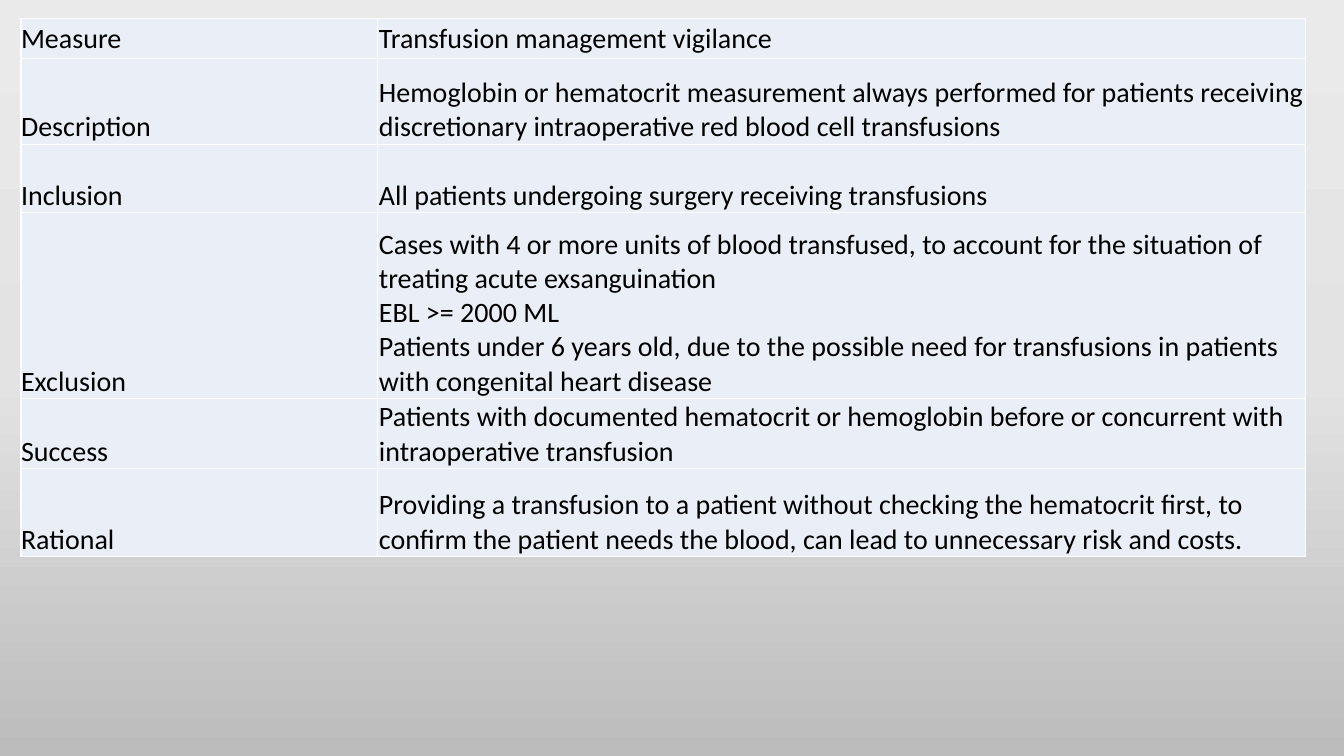
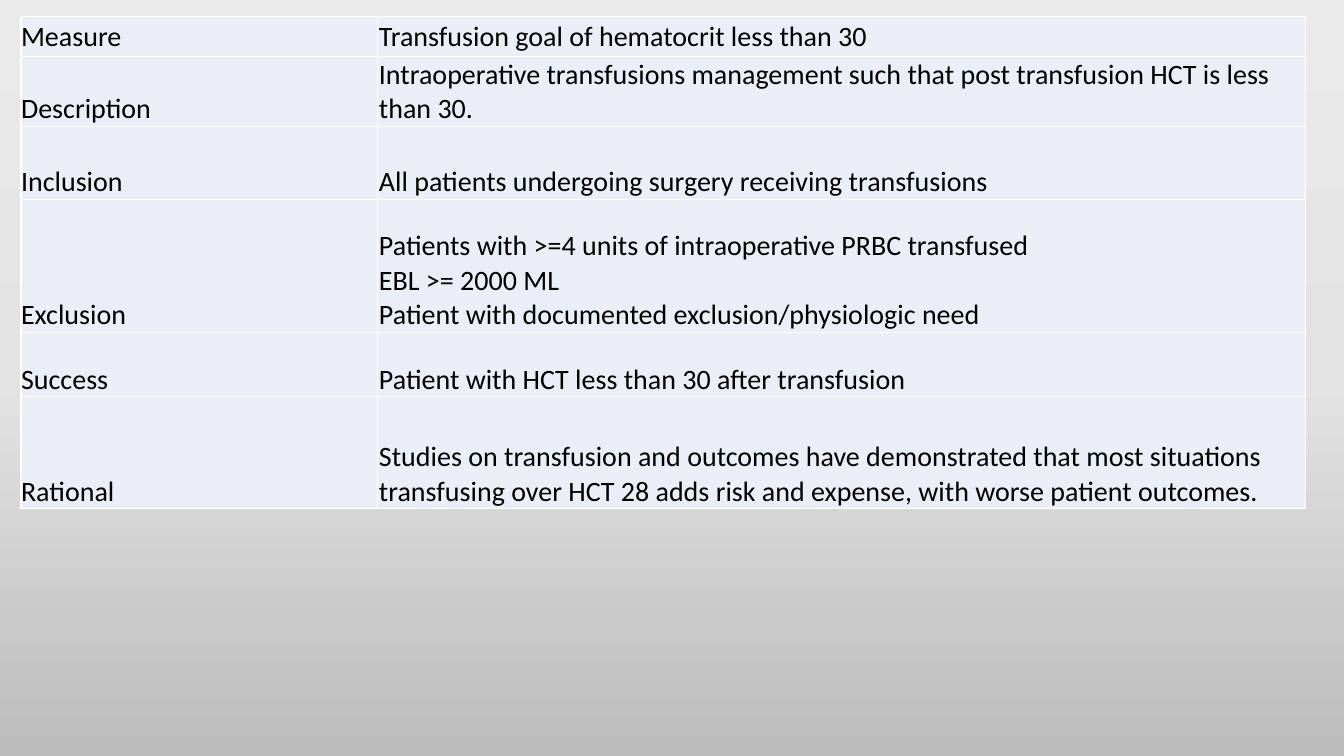
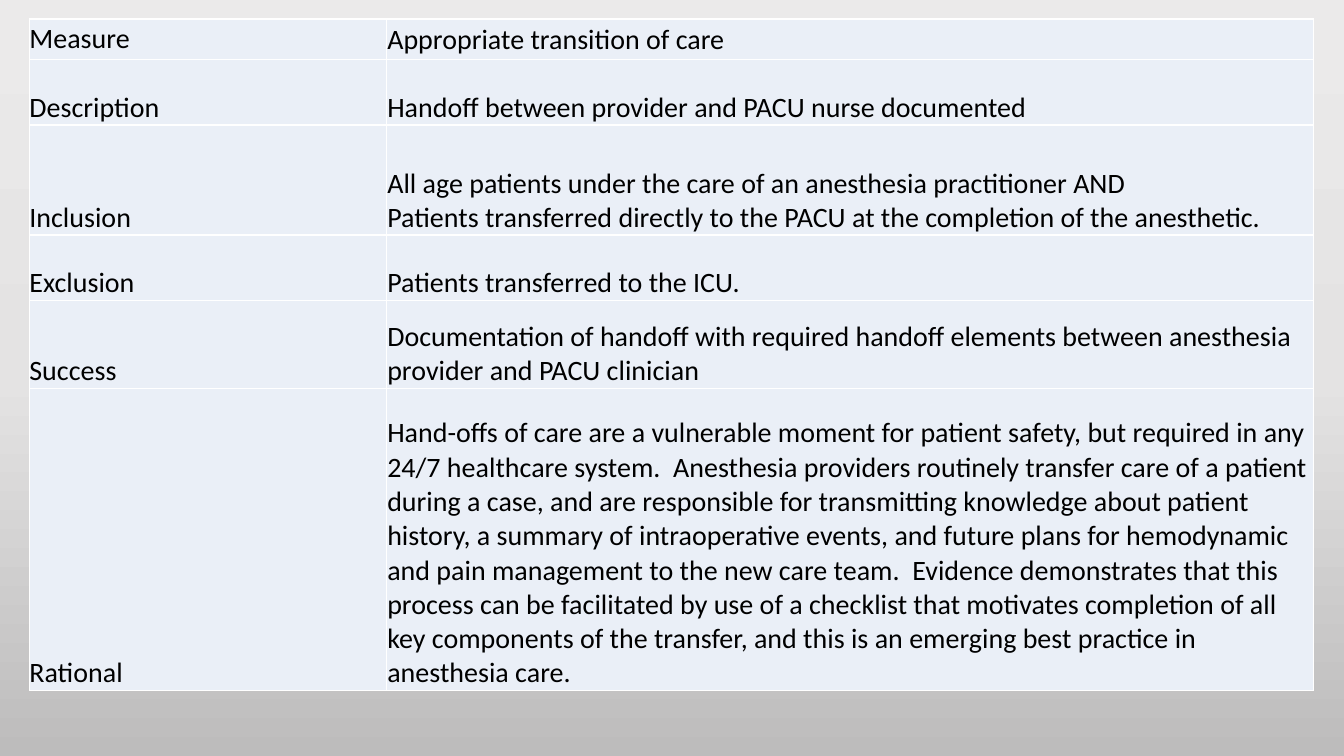
from copy import deepcopy

from lxml import etree
from pptx import Presentation
from pptx import util as u
from pptx.dml.color import RGBColor
from pptx.enum import text
from pptx.oxml import ns

COLORS = {
    "bg_top": "EBEAEA",
    "bg_middle": "E4E3E3",
    "bg_bottom": "BDBCBC",
    "cell": "EAEFF7",
    "border": "FFFFFF",
    "text": "000000",
}
FONT = {"name": "Calibri", "size": u.Pt(20), "bold": False}
BORDER_WIDTH = u.Pt(1)
COL_WIDTHS = (8.99, 23.37)
LABELS = ("Measure", "Description", "Inclusion", "Exclusion", "Success", "Rational")
LABEL_MARGINS = {
    "margin_left": 0, "margin_top": 0, "margin_right": 0, "margin_bottom": 0,
}
VALUE_MARGINS = {
    "margin_left": u.Cm(0.03), "margin_top": u.Cm(0.03),
    "margin_right": u.Cm(0.03), "margin_bottom": 0,
}

MEASURES = [
    {
        "at": (0.53, 0.46),
        "heights": (1.02, 2.16, 1.72, 4.69, 1.63, 2.22),
        "values": (
            "Transfusion management vigilance",
            "Hemoglobin or hematocrit measurement always performed for patients "
            "receiving discretionary intraoperative red blood cell transfusions",
            "All patients undergoing surgery receiving transfusions",
            "Cases with 4 or more units of blood transfused, to account for the "
            "situation of treating acute exsanguination\n"
            "EBL >= 2000 ML\n"
            "Patients under 6 years old, due to the possible need for transfusions "
            "in patients with congenital heart disease",
            "Patients with documented hematocrit or hemoglobin before or concurrent "
            "with intraoperative transfusion",
            "Providing a transfusion to a patient without checking the hematocrit "
            "first, to confirm the patient needs the blood, can lead to unnecessary "
            "risk and costs.",
        ),
    },
    {
        "at": (0.53, 0.41),
        "heights": (1.02, 1.52, 1.83, 3.35, 1.63, 2.82),
        "values": (
            "Transfusion goal of hematocrit less than 30",
            "Intraoperative transfusions management such that post transfusion HCT "
            "is less than 30.",
            "All patients undergoing surgery receiving transfusions",
            "Patients with >=4 units of intraoperative PRBC transfused\n"
            "EBL >= 2000 ML\n"
            "Patient with documented exclusion/physiologic need",
            "Patient with HCT less than 30 after transfusion",
            "Studies on transfusion and outcomes have demonstrated that most "
            "situations transfusing over HCT 28 adds risk and expense, with worse "
            "patient outcomes.",
        ),
    },
    {
        "at": (0.74, 0.48),
        "heights": (1.02, 1.65, 2.77, 1.65, 2.21, 7.62),
        "values": (
            "Appropriate transition of care",
            "Handoff between provider and PACU nurse documented",
            "All age patients under the care of an anesthesia practitioner AND\n"
            "Patients transferred directly to the PACU at the completion of the "
            "anesthetic.",
            "Patients transferred to the ICU.",
            "Documentation of handoff with required handoff elements between "
            "anesthesia provider and PACU clinician",
            "Hand-offs of care are a vulnerable moment for patient safety, but "
            "required in any 24/7 healthcare system.  Anesthesia providers routinely "
            "transfer care of a patient during a case, and are responsible for "
            "transmitting knowledge about patient history, a summary of "
            "intraoperative events, and future plans for hemodynamic and pain "
            "management to the new care team.  Evidence demonstrates that this "
            "process can be facilitated by use of a checklist that motivates "
            "completion of all key components of the transfer, and this is an "
            "emerging best practice in anesthesia care.",
        ),
    },
]


def rgb(key):
    return RGBColor.from_string(COLORS[key])


def set_attrs(obj, values):
    for name, value in values.items():
        setattr(obj, name, value)


def set_background(master):
    fill = master.background.fill
    fill.gradient()
    fill.gradient_angle = 270
    stops = master.element.find(".//" + ns.qn("a:gsLst"))
    stops.append(deepcopy(stops[-1]))
    keys = ("bg_top", "bg_middle", "bg_bottom")
    for stop, key, position in zip(fill.gradient_stops, keys, (0, 0.5, 1)):
        stop.color.rgb = rgb(key)
        stop.position = position


def add_borders(cell):
    tc_pr = cell._tc.get_or_add_tcPr()
    for side in ("lnL", "lnR", "lnT", "lnB"):
        ln = etree.SubElement(tc_pr, ns.qn("a:" + side), w=str(BORDER_WIDTH))
        fill = etree.SubElement(ln, ns.qn("a:solidFill"))
        etree.SubElement(fill, ns.qn("a:srgbClr"), val=COLORS["border"])


def fill_cell(cell, content, margins, anchor):
    add_borders(cell)
    cell.fill.solid()
    cell.fill.fore_color.rgb = rgb("cell")
    set_attrs(cell, {**margins, "vertical_anchor": anchor})
    p = cell.text_frame.paragraphs[0]
    p.text = content
    for r in p.runs:
        set_attrs(r.font, FONT)
        r.font.color.rgb = rgb("text")


def add_measure_table(s, at, heights, values):
    left, top = at
    size = (len(LABELS), len(COL_WIDTHS))
    tbl = s.shapes.add_table(
        *size, u.Cm(left), u.Cm(top), u.Cm(sum(COL_WIDTHS)), u.Cm(sum(heights))
    ).table
    set_attrs(tbl, {"first_row": False, "horz_banding": False})
    for col, width in zip(tbl.columns, COL_WIDTHS):
        col.width = u.Cm(width)
    for i, row in enumerate(tbl.rows):
        row.height = u.Cm(heights[i])
        anchor = text.MSO_ANCHOR.BOTTOM if i else text.MSO_ANCHOR.MIDDLE
        fill_cell(tbl.cell(i, 0), LABELS[i], LABEL_MARGINS, anchor)
        fill_cell(tbl.cell(i, 1), values[i], VALUE_MARGINS, anchor)


def main():
    prs = Presentation()
    set_attrs(prs, {"slide_width": u.Cm(33.87), "slide_height": u.Cm(19.05)})
    set_background(prs.slide_master)
    for measure in MEASURES:
        s = prs.slides.add_slide(prs.slide_layouts[6])
        add_measure_table(s, **measure)
    prs.save("out.pptx")


if __name__ == "__main__":
    main()
